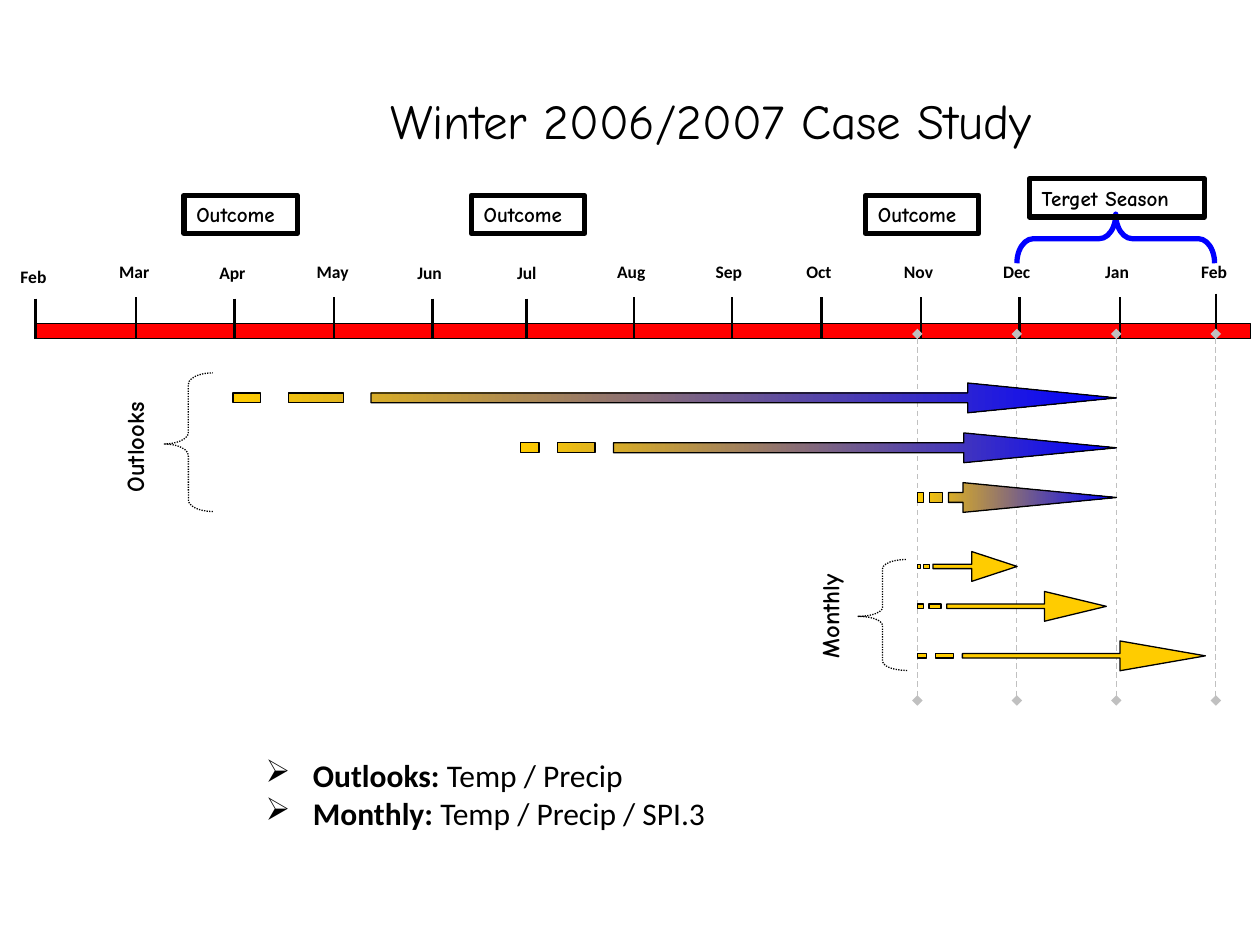
from lxml import etree
from pptx import Presentation
from pptx.dml.color import RGBColor
from pptx.enum.dml import MSO_LINE
from pptx.enum.shapes import MSO_CONNECTOR, MSO_SHAPE
from pptx.enum.text import MSO_ANCHOR, PP_ALIGN
from pptx.oxml.ns import qn
from pptx.util import Pt

STRAIGHT = MSO_CONNECTOR.STRAIGHT
RECTANGLE, LEFT_BRACE = MSO_SHAPE.RECTANGLE, MSO_SHAPE.LEFT_BRACE
DASH, DOTTED = MSO_LINE.DASH, MSO_LINE.ROUND_DOT
LEFT, CENTER = PP_ALIGN.LEFT, PP_ALIGN.CENTER
TOP = MSO_ANCHOR.TOP
BODY_FONT, COMIC_FONT = "Calibri", "Comic Neue"
BLACK, BLUE, GOLD, RED, GRAY = "000000", "0000FF", "FFCC00", "FF0000", "C0C0C0"
color = RGBColor.from_string


def outline(shape, line_color, width, dash=None):
    """Set the line of a shape or connector and remove its shadow."""
    shape.line.color.rgb = color(line_color)
    shape.line.width = Pt(width)
    if dash is not None:
        shape.line.dash_style = dash
    etree.SubElement(shape.element.spPr, qn("a:effectLst"))


def write(shape, text, font_name, size, bold=True, align=CENTER, wrap=False):
    """Fill a shape with one paragraph."""
    frame = shape.text_frame
    frame.word_wrap = wrap
    frame.vertical_anchor = TOP
    paragraph = frame.paragraphs[0]
    paragraph.text = text
    paragraph.alignment = align
    paragraph.font.name = font_name
    paragraph.font.size = Pt(size)
    paragraph.font.bold = bold
    paragraph.font.color.rgb = color(BLACK)


presentation = Presentation()
presentation.slide_width = Pt(720)
presentation.slide_height = Pt(540)
slide = presentation.slides.add_slide(presentation.slide_layouts[6])
shapes = slide.shapes

# Brace over the target season
season_brace = shapes.add_shape(LEFT_BRACE, Pt(623.5), Pt(79.9), Pt(28.1), Pt(113))
season_brace.rotation = 90
season_brace.adjustments[0] = 0.333
season_brace.fill.background()
outline(season_brace, BLUE, 3)

# Timeline: month, tick x, tick top, label centre, label top, label width
bar = shapes.add_shape(RECTANGLE, Pt(19.8), Pt(184.9), Pt(694.8), Pt(8.6))
bar.fill.solid()
bar.fill.fore_color.rgb = color(RED)
outline(bar, BLACK, 0.75)

months = [
    ("Feb", 20.2, 170.6, 19.1, 148.3, 29.5),
    ("Mar", 77.8, 169.9, 76.7, 145.4, 33.8),
    ("Apr", 133.9, 170.6, 132.8, 146.2, 31),
    ("May", 190.8, 169.9, 190.1, 145.4, 33.1),
    ("Jun", 247, 170.6, 245.5, 146.2, 28.8),
    ("Jul", 301, 170.6, 301, 146.2, 25.9),
    ("Aug", 362.2, 169.9, 360.7, 145.4, 31.7),
    ("Sep", 418.3, 169.9, 416.5, 145.4, 29.5),
    ("Oct", 469.4, 169.9, 468, 145.4, 28.8),
    ("Nov", 526.3, 169.9, 524.9, 145.4, 31.7),
    ("Dec", 582.5, 169.9, 581, 145.4, 30.2),
    ("Jan", 640.1, 169.9, 638.3, 145.4, 28.1),
    ("Feb", 694.8, 167.8, 693.7, 145.4, 29.5),
]
for month, tick_x, tick_top, center, label_top, width in months:
    tick = shapes.add_connector(STRAIGHT, Pt(tick_x), Pt(tick_top),
                                Pt(tick_x), Pt(tick_top + 23))
    outline(tick, BLACK, 1.5)
    label = shapes.add_textbox(Pt(center - width / 2), Pt(label_top), Pt(width), Pt(19.4))
    write(label, month, BODY_FONT, 10)

title = shapes.add_textbox(Pt(180), Pt(48.2), Pt(463), Pt(41))
title.text_frame.margin_left = Pt(43)
write(title, "Winter 2006/2007 Case Study", COMIC_FONT, 28, bold=False, align=LEFT, wrap=True)

# Dashed guides with diamond ends
for index in range(4):
    guide_x = Pt(524.2 + 56.85 * index)
    guide = shapes.add_connector(STRAIGHT, guide_x, Pt(190.8), guide_x, Pt(400.3))
    outline(guide, GRAY, 0.75, DASH)
    line_element = guide.element.spPr.find(qn("a:ln"))
    for end in ("a:headEnd", "a:tailEnd"):
        etree.SubElement(line_element, qn(end), type="diamond")

# Striped arrows: left, top, head start, tip, shaft share of height, gradient
ARROW_HEIGHT = 17
arrows = [
    (133.2, 218.9, 553, 638, 0.33, True),
    (297.4, 247.4, 550.8, 638, 0.33, True),
    (524.2, 275.8, 550.3, 638, 0.33, True),
    (524.2, 315.2, 555.3, 581.2, 0.15, False),
    (524.2, 338, 596.9, 632.2, 0.15, False),
    (524.2, 366.3, 640, 688.8, 0.15, False),
]
for left, top, head, tip, shaft_share, has_gradient in arrows:
    unit = (tip - left) / 32
    middle = top + ARROW_HEIGHT / 2
    upper = middle - ARROW_HEIGHT * shaft_share / 2
    lower = middle + ARROW_HEIGHT * shaft_share / 2
    shaft = left + 5 * unit
    contours = [[(head, top), (head, upper), (shaft, upper), (shaft, lower),
                 (head, lower), (head, top + ARROW_HEIGHT), (tip, middle)]]
    for start, stop in ((2, 4), (0, 1)):
        stripe_left, stripe_right = left + start * unit, left + stop * unit
        contours.append([(stripe_left, upper), (stripe_left, lower),
                         (stripe_right, lower), (stripe_right, upper)])
    builder = shapes.build_freeform(Pt(head), Pt(top))
    for number, contour in enumerate(contours):
        points = [(Pt(x), Pt(y)) for x, y in contour]
        if number:
            builder.move_to(*points[0])
        builder.add_line_segments(points[1:], close=True)
    arrow = builder.convert_to_shape()
    if has_gradient:
        arrow.fill.gradient()
        arrow.fill.gradient_angle = 0
        for stop, stop_color in zip(arrow.fill.gradient_stops, (GOLD, BLUE)):
            stop.color.rgb = color(stop_color)
    else:
        arrow.fill.solid()
        arrow.fill.fore_color.rgb = color(GOLD)
    outline(arrow, BLACK, 0.75)

# Dotted braces with upright names
arrow_groups = [
    ("Outlooks", (93.6, 213.1, 28.1, 79.2), 0.233, (40.3, 243.4, 73.4, 24.5)),
    ("Monthly", (490.3, 319.7, 28.1, 63.4), 0.186, (439.9, 339.8, 69.1, 24.5)),
]
for name, brace_box, curve, name_box in arrow_groups:
    brace = shapes.add_shape(LEFT_BRACE, *map(Pt, brace_box))
    brace.adjustments[0] = curve
    brace.adjustments[1] = 0.513
    brace.fill.background()
    outline(brace, BLACK, 0.75, DOTTED)
    name_label = shapes.add_textbox(*map(Pt, name_box))
    name_label.rotation = 270
    write(name_label, name, COMIC_FONT, 14)

# Boxes above the timeline
boxes = [
    ("Outcome", 105.1, 111.6, 64.8),
    ("Outcome", 269.3, 111.6, 64.8),
    ("Outcome", 494.6, 111.6, 64.8),
    ("Terget Season", 588.2, 102.2, 100.1),
]
for text, left, top, width in boxes:
    box = shapes.add_shape(RECTANGLE, Pt(left), Pt(top), Pt(width), Pt(21.8))
    box.fill.background()
    outline(box, BLACK, 3)
    write(box, text, COMIC_FONT, 12, align=LEFT, wrap=True)

# Legend
legend = shapes.add_textbox(Pt(144.7), Pt(428.4), Pt(267.1), Pt(51.1))
legend.text_frame.word_wrap = False
legend_items = [("Outlooks: ", "Temp / Precip"), ("Monthly: ", "Temp / Precip / SPI.3")]
for index, (term, description) in enumerate(legend_items):
    frame = legend.text_frame
    paragraph = frame.add_paragraph() if index else frame.paragraphs[0]
    properties = paragraph._p.get_or_add_pPr()
    properties.set("marL", str(Pt(27)))
    properties.set("indent", str(Pt(-27)))
    etree.SubElement(properties, qn("a:buChar"), char="➢")
    paragraph.font.name = BODY_FONT
    paragraph.font.size = Pt(18)
    paragraph.font.color.rgb = color(BLACK)
    for text, bold in ((term, True), (description, False)):
        run = paragraph.add_run()
        run.text = text
        run.font.bold = bold

presentation.save("out.pptx")
